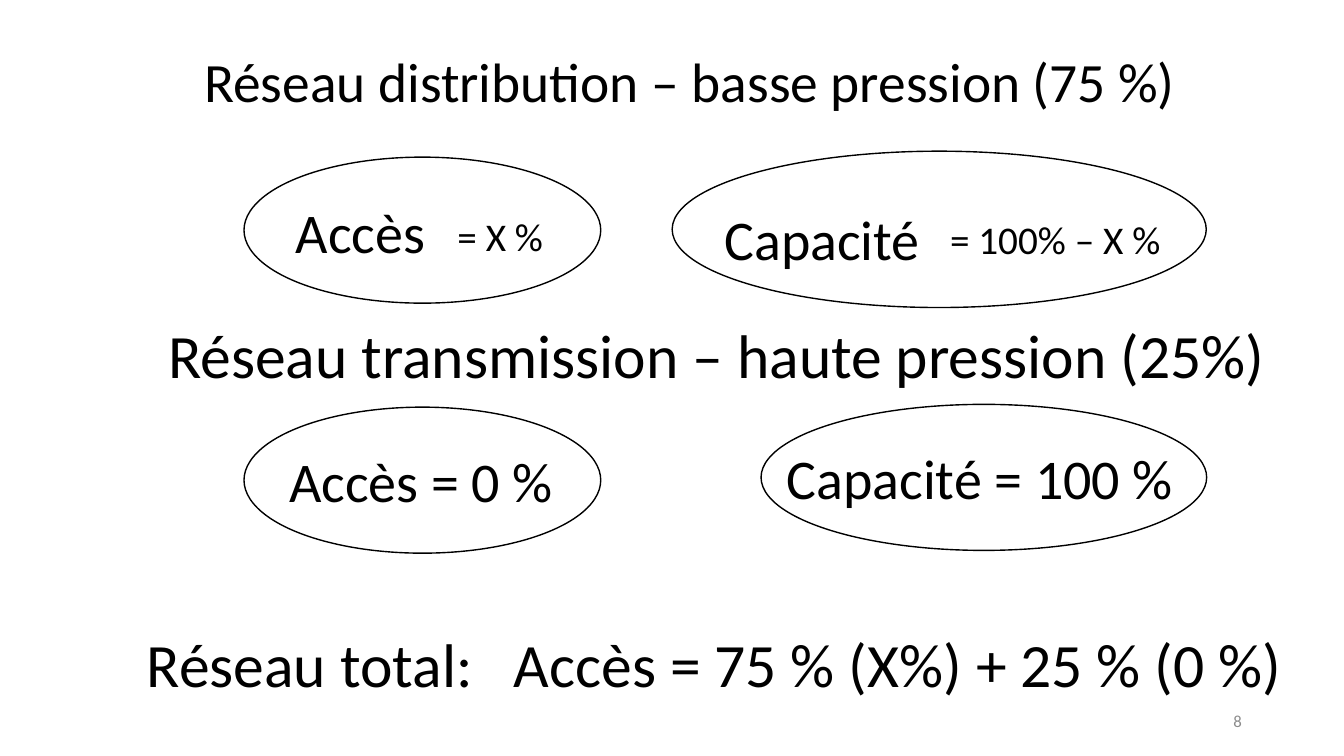
"""Build the slide on access and capacity shares of the gas network."""
from lxml import etree
from pptx import Presentation
from pptx.dml.color import RGBColor
from pptx.enum import shapes, text
from pptx.oxml import ns
from pptx.util import Cm, Pt

BLACK = RGBColor(0x00, 0x00, 0x00)
GREY = RGBColor(0x8C, 0x8C, 0x8C)
FONT = "Calibri"

ELLIPSES = [
    (6.15, 3.96, 8.99, 3.68),
    (16.94, 3.81, 13.46, 3.94),
    (6.15, 10.26, 8.99, 3.68),
    (19.18, 10.19, 11.23, 3.68),
]
LABELS = [
    ("Accès", (7.21, 4.85, 4.06, 1.96), 40, True),
    ("= X %", (11.28, 5.23, 3.12, 1.45), 28, True),
    ("Capacité", (18.01, 5.03, 5.49, 2.74), 40, False),
    (" = 100% – X %", (23.47, 5.31, 6.12, 1.45), 28, False),
    ("Réseau transmission – haute pression (25%)", (3.99, 7.85, 28.8, 2.13), 44, False),
    ("Accès = 0 %", (7.04, 11.13, 7.21, 2.74), 40, False),
    ("Capacité = 100 %", (19.58, 11.05, 10.82, 1.96), 40, True),
]


def format_text(tf, content, size, color=BLACK, align=text.PP_ALIGN.LEFT):
    tf.text = content
    p = tf.paragraphs[0]
    p.alignment = align
    for r in p.runs:
        r.font.name = FONT
        r.font.size = Pt(size)
        r.font.color.rgb = color
    return p


def set_title(s, content):
    sp = s.shapes.title
    sp.left, sp.top, sp.width, sp.height = Cm(1.55), Cm(0.84), Cm(29.21), Cm(2.59)
    tf = sp.text_frame
    tf.margin_left = Cm(2.72)
    tf.vertical_anchor = text.MSO_ANCHOR.MIDDLE
    tf.auto_size = text.MSO_AUTO_SIZE.NONE
    p = format_text(tf, content, 39.6, align=text.PP_ALIGN.CENTER)
    p.line_spacing = 0.9


def add_ellipse(s, box):
    sp = s.shapes.add_shape(shapes.MSO_SHAPE.OVAL, *map(Cm, box))
    sp.shadow.inherit = False
    sp.fill.background()
    sp.line.color.rgb = BLACK
    sp.line.width = Pt(1)


def add_label(s, content, box, size, wrap=True, **style):
    tf = s.shapes.add_textbox(*map(Cm, box)).text_frame
    tf.word_wrap = wrap
    tf.auto_size = text.MSO_AUTO_SIZE.SHAPE_TO_FIT_TEXT
    format_text(tf, content, size, **style)
    return tf


def add_total(s):
    tf = add_label(s, "Réseau total:\tAccès = 75 % (X%) + 25 % (0 %)",
                   (0.53, 15.65, 34.93, 2.13), 44)
    tf.margin_left = Cm(3.17)
    pPr = tf.paragraphs[0]._p.get_or_add_pPr()
    tabs = etree.SubElement(pPr, ns.qn("a:tabLst"))
    etree.SubElement(tabs, ns.qn("a:tab"), pos=str(Cm(9.25)), algn="l")


def add_page_number(s, number):
    tf = add_label(s, number, (23.93, 17.65, 7.62, 1.02), 12,
                   color=GREY, align=text.PP_ALIGN.RIGHT)
    tf.auto_size = text.MSO_AUTO_SIZE.NONE
    tf.vertical_anchor = text.MSO_ANCHOR.MIDDLE


def main():
    prs = Presentation()
    prs.slide_width, prs.slide_height = Cm(33.87), Cm(19.05)
    s = prs.slides.add_slide(prs.slide_layouts[5])
    set_title(s, "Réseau distribution – basse pression (75 %)")
    for box in ELLIPSES:
        add_ellipse(s, box)
    for label in LABELS:
        add_label(s, *label)
    add_total(s)
    add_page_number(s, "8")
    prs.save("out.pptx")


if __name__ == "__main__":
    main()
